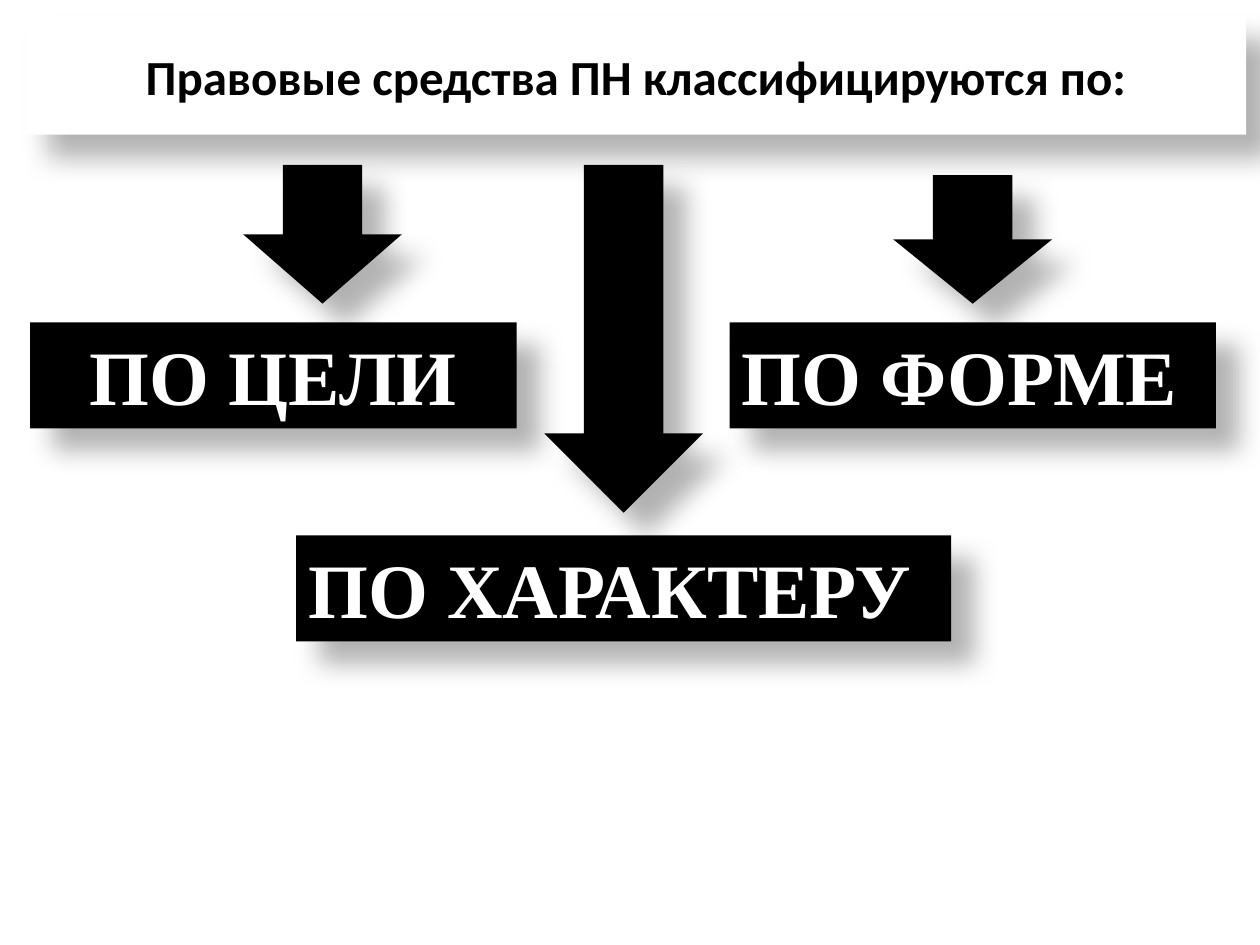
from lxml import etree
from pptx import Presentation
from pptx.dml.color import RGBColor
from pptx.enum.shapes import MSO_SHAPE
from pptx.enum.text import MSO_ANCHOR, MSO_AUTO_SIZE, PP_ALIGN
from pptx.oxml.ns import qn
from pptx.util import Inches, Pt

BLACK, WHITE = "000000", "FFFFFF"

# Content: text, left, top, width, alignment
TITLE = "Правовые средства ПН классифицируются по:"
CRITERIA = [
    ("ПО ЦЕЛИ", 0.24, 2.56, 3.86, PP_ALIGN.CENTER),
    ("ПО ХАРАКТЕРУ", 2.35, 4.25, 5.2, PP_ALIGN.LEFT),
    ("ПО ФОРМЕ", 5.79, 2.56, 3.86, PP_ALIGN.LEFT),
]
CRITERION_HEIGHT = 0.84

# Arrows: left, top, height
ARROWS = [(1.93, 1.31, 1.1), (4.32, 1.31, 2.76), (7.09, 1.39, 1.02)]
ARROW_WIDTH = 1.26


def color(value):
    return RGBColor.from_string(value)


def add_shadow(shape):
    shape.shadow.inherit = False
    effects = shape._element.spPr.find(qn("a:effectLst"))
    shadow = etree.SubElement(
        effects, qn("a:outerShdw"), blurRad=str(Pt(15)), dist=str(Pt(18)),
        dir=str(45 * 60000), algn="tl", rotWithShape="0")
    tint = etree.SubElement(shadow, qn("a:srgbClr"), val=BLACK)
    etree.SubElement(tint, qn("a:alpha"), val="30000")


def add_block(slide, kind, left, top, width, height, fill):
    shape = slide.shapes.add_shape(
        kind, Inches(left), Inches(top), Inches(width), Inches(height))
    shape.fill.solid()
    shape.fill.fore_color.rgb = color(fill)
    shape.line.fill.background()
    add_shadow(shape)
    return shape


def add_text(shape, text, font, size, ink, align, anchor):
    tf = shape.text_frame
    tf.word_wrap = True
    tf.vertical_anchor = anchor
    p = tf.paragraphs[0]
    p.alignment = align
    r = p.add_run()
    r.text = text
    r.font.name = font
    r.font.size = Pt(size)
    r.font.bold = True
    r.font.color.rgb = color(ink)


prs = Presentation()
prs.slide_width, prs.slide_height = Inches(10), Inches(7.5)
slide = prs.slides.add_slide(prs.slide_layouts[6])

# Heading band
heading = add_block(slide, MSO_SHAPE.RECTANGLE, 0.2, 0.13, 9.69, 0.94, WHITE)
add_text(heading, TITLE, "Calibri", 28, BLACK, PP_ALIGN.CENTER, MSO_ANCHOR.MIDDLE)

# Classification criteria
for text, left, top, width, align in CRITERIA:
    box = add_block(slide, MSO_SHAPE.RECTANGLE, left, top, width, CRITERION_HEIGHT, BLACK)
    add_text(box, text, "Times New Roman", 44, WHITE, align, MSO_ANCHOR.TOP)
    box.text_frame.auto_size = MSO_AUTO_SIZE.SHAPE_TO_FIT_TEXT

# Arrows from the heading to the criteria
for left, top, height in ARROWS:
    add_block(slide, MSO_SHAPE.DOWN_ARROW, left, top, ARROW_WIDTH, height, BLACK)

prs.save("out.pptx")
